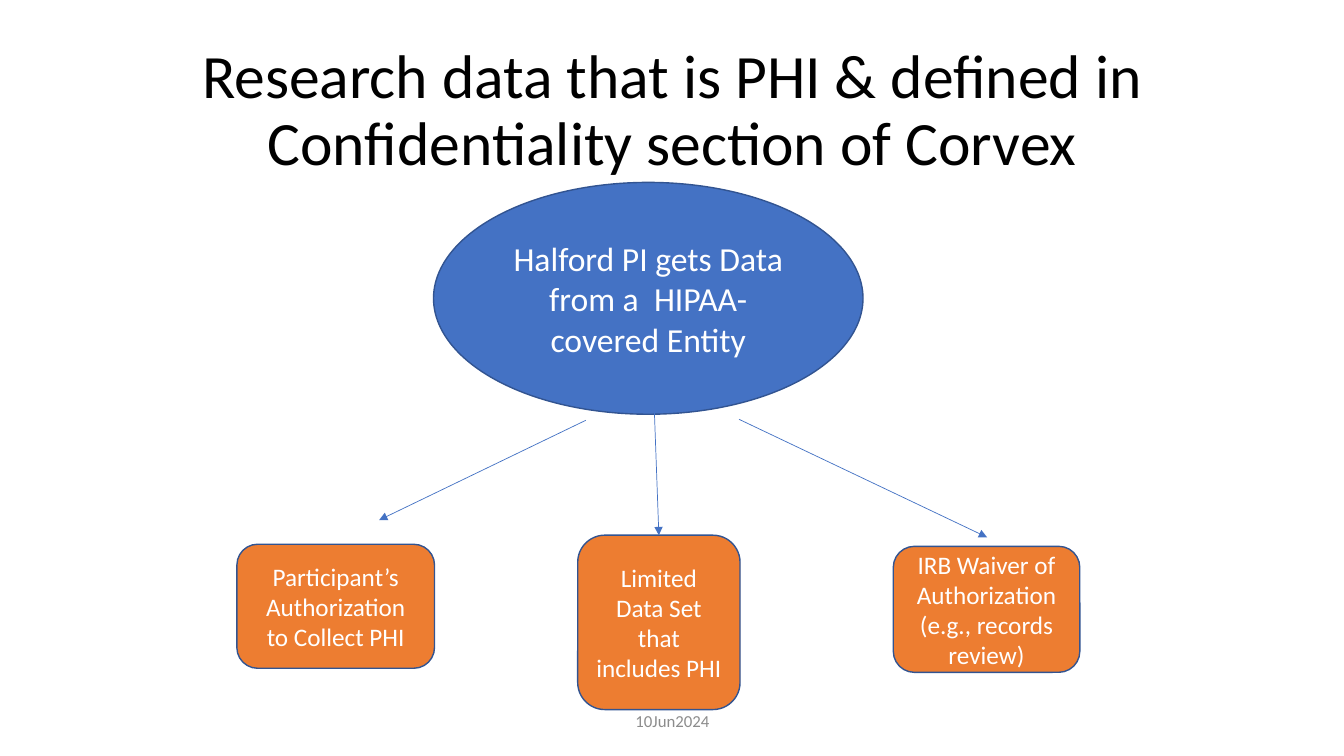
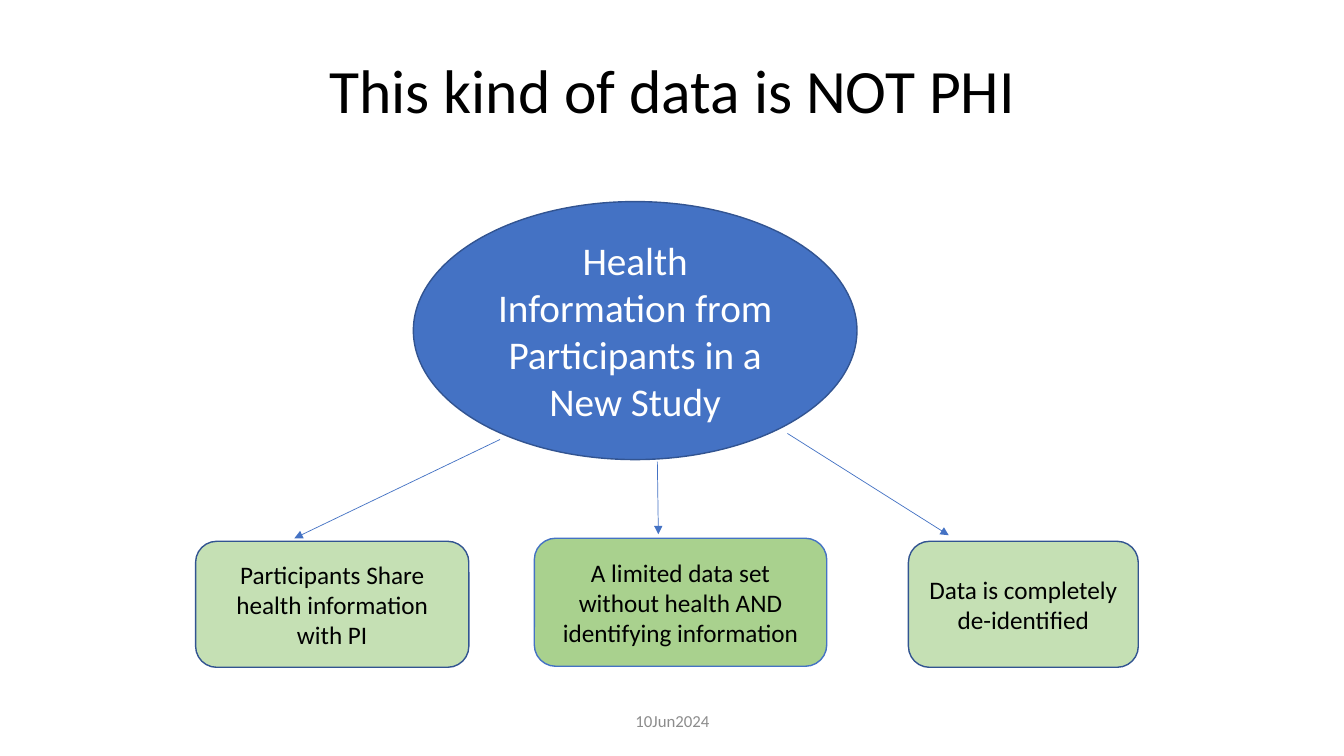
from lxml.etree import SubElement
from pptx import Presentation
from pptx.dml.color import RGBColor
from pptx.enum.shapes import MSO_CONNECTOR, MSO_SHAPE
from pptx.enum.text import MSO_ANCHOR, PP_ALIGN
from pptx.oxml.ns import qn
from pptx.util import Inches, Pt

FONT = "Calibri"
BLUE, NAVY, ORANGE = "4472C4", "325491", "ED7D31"
PALE_GREEN, GREEN = "C5E0B4", "A9D18E"
WHITE, BLACK, GRAY = "FFFFFF", "000000", "8C8C8C"
FOOTER = "10Jun2024"

SLIDES = [
    {
        "title": "Research data that is PHI & defined in Confidentiality section of Corvex",
        "title_top": 0.4,
        "source": ("Halford PI gets Data from a  HIPAA-covered Entity", (4.3, 1.81, 4.26, 2.3), 24),
        "box_text": WHITE,
        "boxes": [
            ("Participant’s Authorization to Collect PHI", (2.35, 5.4, 1.96, 1.23), ORANGE, NAVY),
            ("Limited Data Set that includes PHI", (5.73, 5.31, 1.61, 1.73), ORANGE, NAVY),
            ("IRB Waiver of Authorization (e.g., records review)", (8.86, 5.42, 1.85, 1.25), ORANGE, NAVY),
        ],
        "arrows": [
            ((5.81, 4.17), (3.76, 5.16), None),
            ((6.49, 4.07), (6.53, 5.31), 1),
            ((7.33, 4.16), (9.79, 5.33), None),
        ],
    },
    {
        "title": "This kind of data is NOT PHI",
        "title_top": 0.55,
        "source": ("Health Information from Participants in a New Study", (4.1, 2, 4.4, 2.56), 28),
        "box_text": BLACK,
        "boxes": [
            ("Participants Share health information with PI", (1.94, 5.37, 2.71, 1.25), PALE_GREEN, NAVY),
            ("A limited data set without health AND identifying information", (5.3, 5.34, 2.9, 1.27), GREEN, BLUE),
            ("Data is completely de-identified", (9.01, 5.37, 2.28, 1.25), PALE_GREEN, NAVY),
        ],
        "arrows": [
            ((4.96, 4.36), (2.92, 5.34), None),
            ((6.52, 4.58), (6.53, 5.3), None),
            ((7.81, 4.3), (9.41, 5.31), None),
        ],
    },
]


def color(value):
    return RGBColor.from_string(value)


def inches(values):
    return [Inches(value) for value in values]


def write(shape, text, size, ink, anchor=MSO_ANCHOR.MIDDLE, spacing=None):
    frame = shape.text_frame
    frame.word_wrap = True
    frame.vertical_anchor = anchor
    para = frame.paragraphs[0]
    para.alignment = PP_ALIGN.CENTER
    para.line_spacing = spacing
    span = para.add_run()
    span.text = text
    span.font.name = FONT
    span.font.size = Pt(size)
    span.font.color.rgb = color(ink)


def add_node(page, kind, text, place, size, ink, fill, outline):
    node = page.shapes.add_shape(kind, *inches(place))
    node.shadow.inherit = False
    node.fill.solid()
    node.fill.fore_color.rgb = color(fill)
    node.line.color.rgb = color(outline)
    node.line.width = Pt(1)
    write(node, text, size, ink)
    return node


def add_arrow(page, start, end):
    arrow = page.shapes.add_connector(MSO_CONNECTOR.STRAIGHT, *inches(start + end))
    arrow.line.color.rgb = color(BLUE)
    arrow.line.width = Pt(0.5)
    SubElement(arrow.line._get_or_add_ln(), qn("a:tailEnd"), type="triangle")
    SubElement(arrow._element.spPr, qn("a:effectLst"))
    return arrow


def add_slide(deck, content):
    page = deck.slides.add_slide(deck.slide_layouts[6])
    text, place, size = content["source"]
    add_node(page, MSO_SHAPE.OVAL, text, place, size, WHITE, BLUE, NAVY)
    boxes = [
        add_node(page, MSO_SHAPE.ROUNDED_RECTANGLE, text, place, 18, content["box_text"], fill, outline)
        for text, place, fill, outline in content["boxes"]
    ]
    title = page.shapes.add_textbox(*inches((0.92, content["title_top"], 11.5, 1.45)))
    write(title, content["title"], 44, BLACK, MSO_ANCHOR.TOP, 0.9)
    for start, end, target in content["arrows"]:
        arrow = add_arrow(page, start, end)
        if target is not None:
            arrow.end_connect(boxes[target], 0)
    footer = page.shapes.add_textbox(*inches((4.42, 6.95, 4.5, 0.4)))
    write(footer, FOOTER, 12, GRAY)


def main():
    deck = Presentation()
    deck.slide_width, deck.slide_height = inches((13.33, 7.5))
    for content in SLIDES:
        add_slide(deck, content)
    deck.save("out.pptx")


if __name__ == "__main__":
    main()
